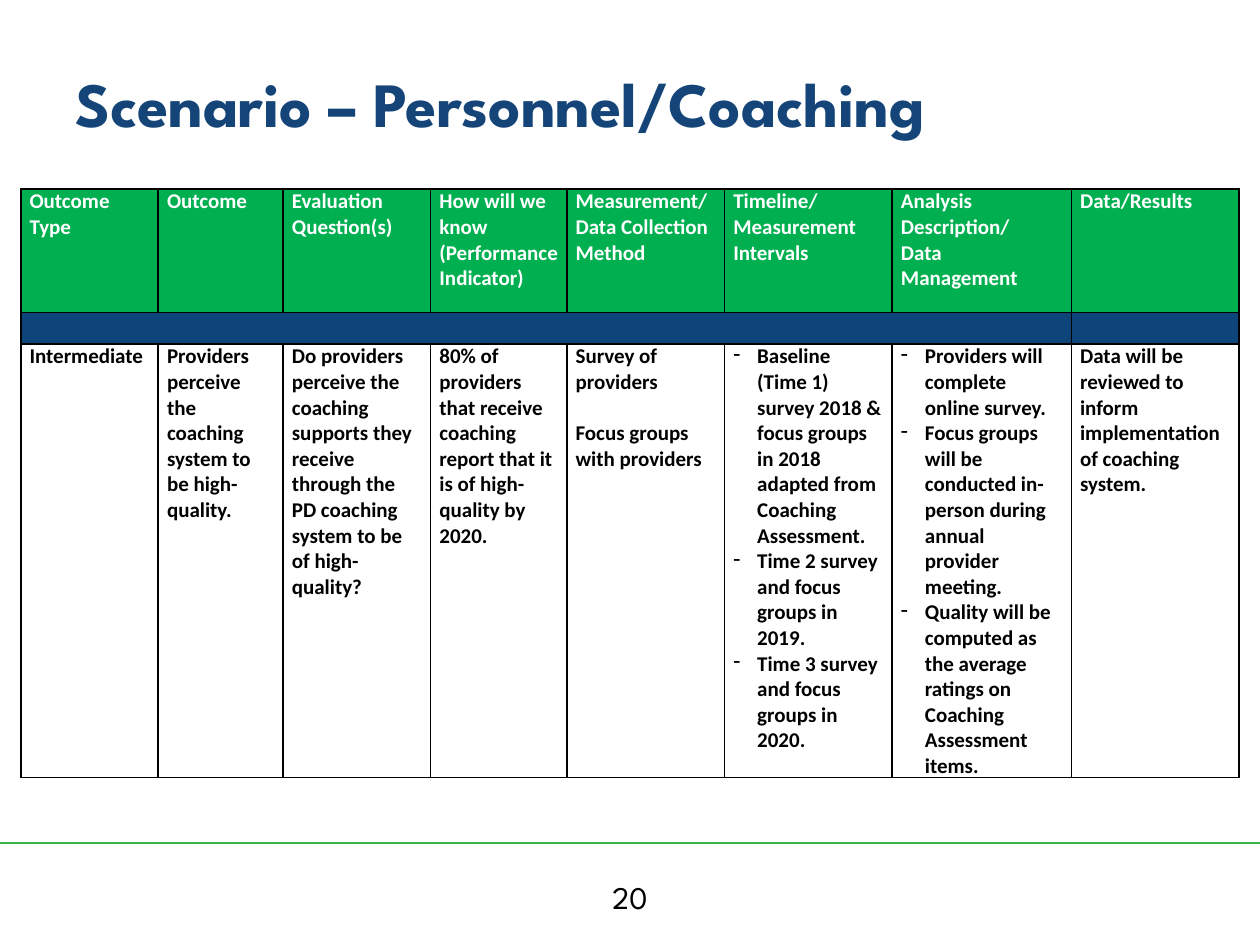
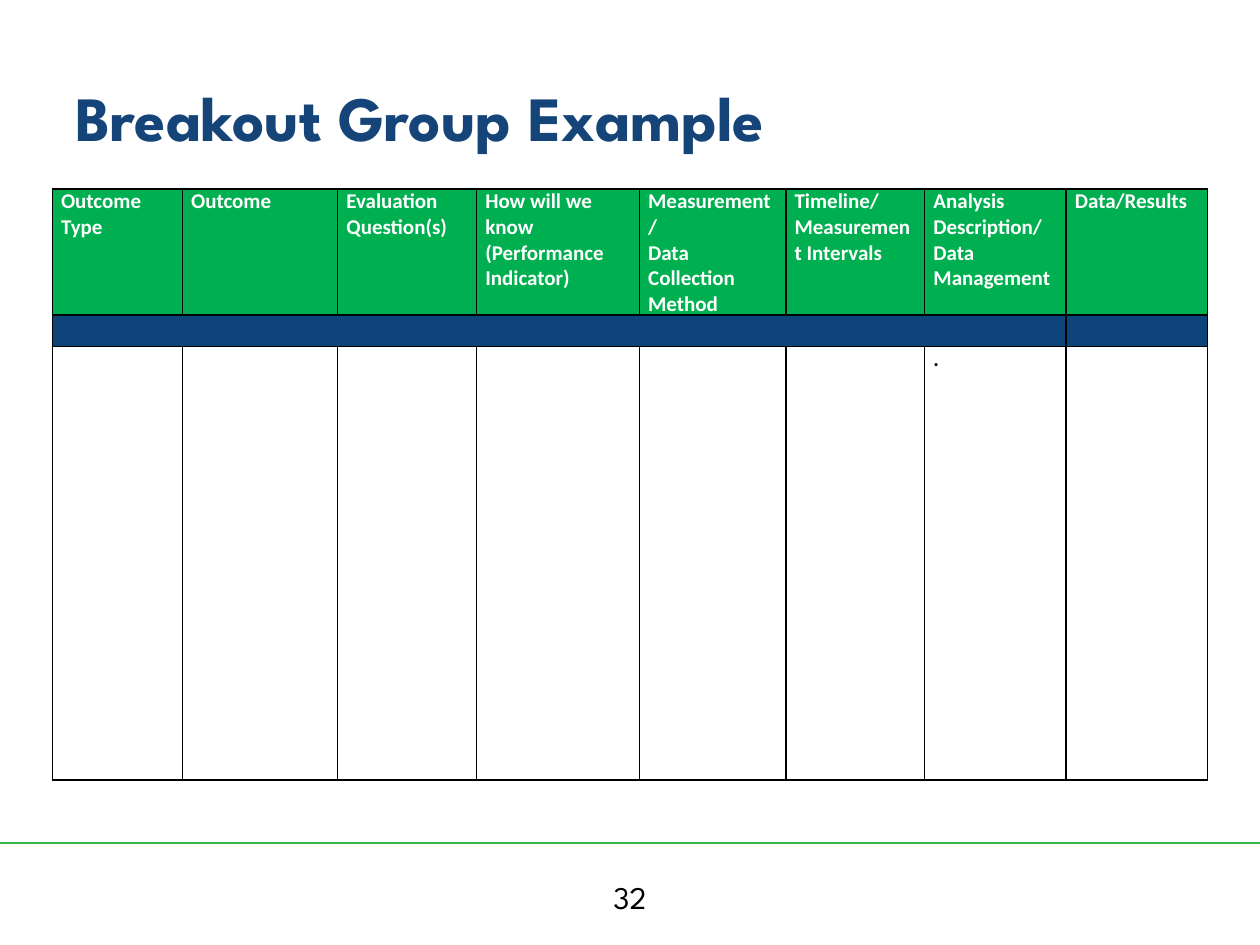
from dataclasses import dataclass

from lxml import etree
from pptx import Presentation
from pptx import util as u
from pptx.dml.color import RGBColor
from pptx.enum import shapes, text
from pptx.oxml import ns


@dataclass(frozen=True)
class Theme:
    title_font: str = "League Spartan"
    table_font: str = "Calibri"
    title_size: int = 36
    number_size: int = 18
    table_size: int = 12
    title: str = "154578"
    header: str = "00B050"
    band: str = "0D4479"
    rule: str = "39B54A"
    black: str = "000000"
    white: str = "FFFFFF"


THEME = Theme()
WIDTH, HEIGHT = u.Inches(10), u.Inches(7.5)
HEADINGS = [
    ["Outcome Type"],
    ["Outcome"],
    ["Evaluation Question(s)"],
    ["How will we know", "(Performance Indicator)"],
    ["Measurement/", "Data Collection Method"],
    ["Timeline/", "Measurement Intervals"],
    ["Analysis Description/", "Data Management"],
    ["Data/Results"],
]
ROW_HEIGHTS = [0.98, 0.25, 3.44]
BULLET = "- "


@dataclass(frozen=True)
class Plan:
    title: str
    title_height: float
    number: str
    table_width: float
    columns: list
    answers: list


PLANS = [
    Plan(
        "Scenario – Personnel/Coaching", 1.03, "20", 9.67,
        [1.09, 0.99, 1.17, 1.08, 1.25, 1.33, 1.42, 1.33],
        [
            ["Intermediate"],
            ["Providers perceive the coaching system to be high-quality."],
            ["Do providers perceive the coaching supports they receive through "
             "the PD coaching system to be of high-quality?"],
            ["80% of providers that receive coaching report that it is of "
             "high-quality by 2020."],
            ["Survey of providers", "Focus groups with providers"],
            ["- Baseline (Time 1) survey 2018 & focus groups in 2018 adapted "
             "from Coaching Assessment.",
             "- Time 2 survey and focus groups in 2019.",
             "- Time 3 survey and focus groups in 2020."],
            ["- Providers will complete online survey.",
             "- Focus groups will be conducted in-person during annual "
             "provider meeting.",
             "- Quality will be computed as the average ratings on Coaching "
             "Assessment items."],
            ["Data will be reviewed to inform implementation of coaching system."],
        ],
    ),
    Plan(
        "Breakout Group Example", 1.25, "32", 9.17,
        [1.03, 1.23, 1.1, 1.29, 1.16, 1.1, 1.12, 1.12],
        [[], [], [], [], [], [], ["."], []],
    ),
]


def color(value):
    return RGBColor.from_string(value)


def set_font(font, name, size, ink, bold=False):
    font.name, font.size, font.bold = name, u.Pt(size), bold
    font.color.rgb = color(ink)


def add_text(page, box, words, size, ink, bold=False, align=None, anchor=None):
    frame = page.shapes.add_textbox(*box).text_frame
    frame.word_wrap = True
    frame.vertical_anchor = anchor
    para = frame.paragraphs[0]
    para.text, para.alignment = words, align
    set_font(para.font, THEME.title_font, size, ink, bold)


def add_bullet(para):
    props = para._p.get_or_add_pPr()
    indent = u.Inches(0.19)
    props.set("marL", str(indent))
    props.set("indent", str(-indent))
    etree.SubElement(props, ns.qn("a:buChar"), char=BULLET.strip())


def add_borders(cell):
    props = cell._tc.get_or_add_tcPr()
    for place, side in enumerate("LRTB"):
        line = etree.Element(ns.qn(f"a:ln{side}"), w=str(u.Pt(1)))
        fill = etree.SubElement(line, ns.qn("a:solidFill"))
        etree.SubElement(fill, ns.qn("a:srgbClr"), val=THEME.black)
        props.insert(place, line)


def fill_cell(cell, lines, back, ink, gap=0):
    cell.margin_left = cell.margin_right = u.Inches(0.07)
    cell.margin_top = cell.margin_bottom = 0
    cell.fill.solid()
    cell.fill.fore_color.rgb = color(back)
    add_borders(cell)
    frame = cell.text_frame
    if not lines:
        # An empty cell must not stretch its row
        end = frame.paragraphs[0]._p.get_or_add_endParaRPr()
        end.set("sz", str(THEME.table_size * 100))
    for index, line in enumerate(lines):
        para = frame.add_paragraph() if index else frame.paragraphs[0]
        para.text = line.removeprefix(BULLET)
        if index and gap:
            para.space_before = u.Pt(gap)
        if line.startswith(BULLET):
            add_bullet(para)
        set_font(para.font, THEME.table_font, THEME.table_size, ink, True)


def add_plan_table(page, box, columns, answers):
    left, top, width, height = box
    table = page.shapes.add_table(len(ROW_HEIGHTS), len(columns), *box).table
    table.first_row = table.horz_banding = False
    for column, share in zip(table.columns, columns):
        column.width = int(width * share / sum(columns))
    for row, share in zip(table.rows, ROW_HEIGHTS):
        row.height = int(height * share / sum(ROW_HEIGHTS))

    # Headings, divider band and answers
    for index, (heading, answer) in enumerate(zip(HEADINGS, answers)):
        bulleted = any(line.startswith(BULLET) for line in answer)
        gap = 0 if bulleted else 14.6
        fill_cell(table.cell(0, index), heading, THEME.header, THEME.white)
        fill_cell(table.cell(1, index), [], THEME.band, THEME.white)
        fill_cell(table.cell(2, index), answer, THEME.white, THEME.black, gap)
    table.cell(1, 0).merge(table.cell(1, len(columns) - 2))


def add_footer(page, number):
    # Green rule across the page
    level = int(HEIGHT * 0.892)
    rule = page.shapes.add_connector(
        shapes.MSO_CONNECTOR.STRAIGHT, 0, level, WIDTH, level)
    rule.line.color.rgb = color(THEME.rule)
    rule.line.width = u.Pt(1.5)
    etree.SubElement(rule._element.spPr, ns.qn("a:effectLst"))

    # Centred page number
    width = u.Inches(2.33)
    box = ((WIDTH - width) // 2, u.Inches(6.92), width, u.Inches(0.4))
    add_text(page, box, number, THEME.number_size, THEME.black,
             align=text.PP_ALIGN.CENTER)


def add_plan_page(deck, plan):
    page = deck.slides.add_slide(deck.slide_layouts[6])
    add_footer(page, plan.number)
    title_box = (int(WIDTH * 0.05), int(HEIGHT * 0.04),
                 int(WIDTH * 0.9), u.Inches(plan.title_height))
    add_text(page, title_box, plan.title, THEME.title_size, THEME.title,
             bold=True, anchor=text.MSO_ANCHOR.MIDDLE)
    width = u.Inches(plan.table_width)
    table_box = ((WIDTH - width) // 2, int(HEIGHT * 0.2),
                 width, u.Inches(sum(ROW_HEIGHTS)))
    add_plan_table(page, table_box, plan.columns, plan.answers)


def main():
    deck = Presentation()
    deck.slide_width, deck.slide_height = WIDTH, HEIGHT
    for plan in PLANS:
        add_plan_page(deck, plan)
    deck.save("out.pptx")


if __name__ == "__main__":
    main()
